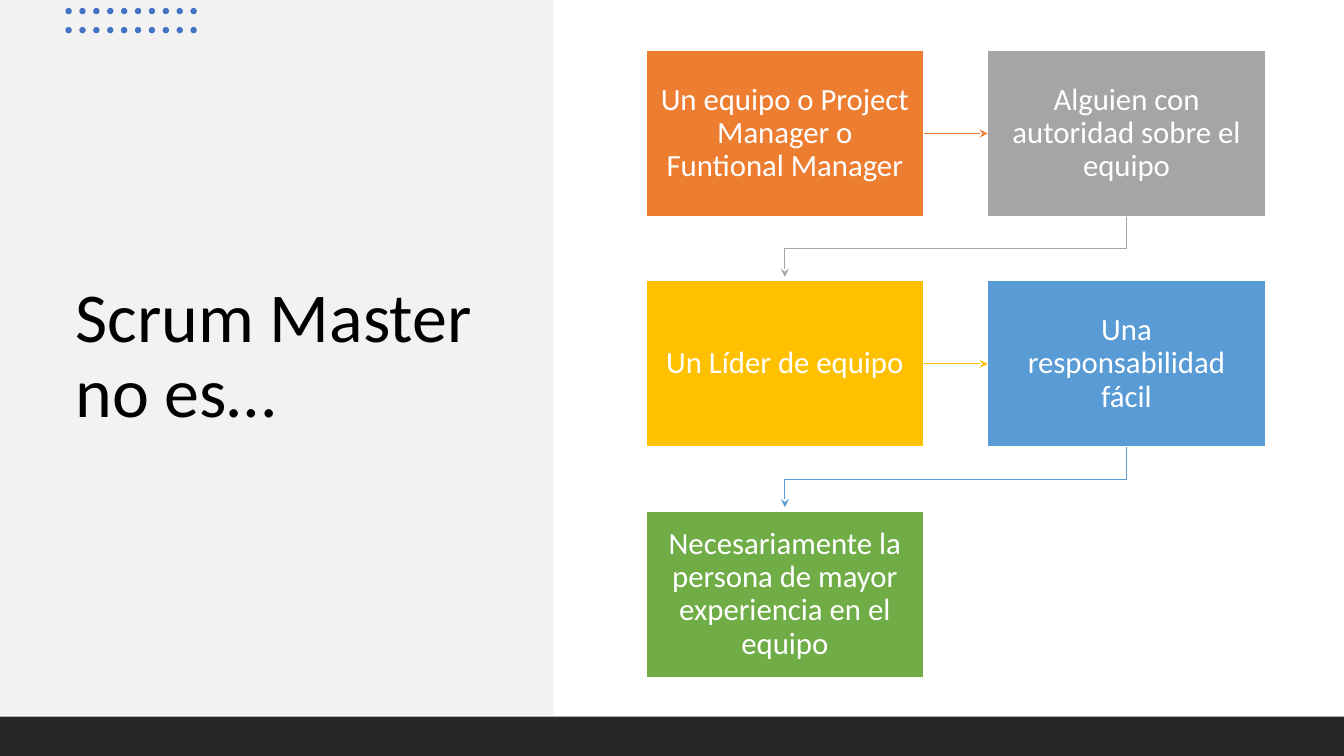
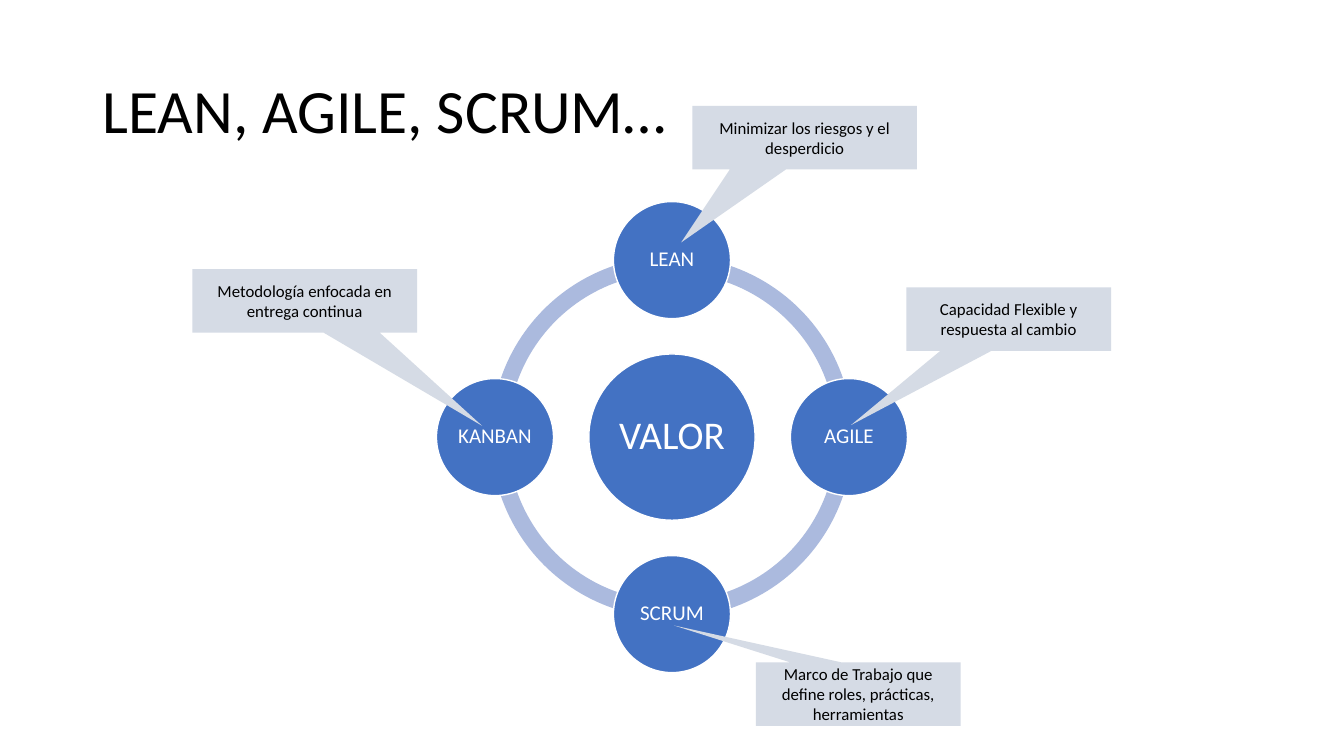
from itertools import pairwise, product

from lxml import etree
from pptx import Presentation
from pptx import util as u
from pptx.dml import color
from pptx.enum import shapes, text
from pptx.oxml import ns

FONT = "Calibri"
BLACK, WHITE = "000000", "FFFFFF"
PANEL, BAND, DOT = "F2F2F2", "262626", "4472C4"
NODE, RING, NOTE = "4372C3", "ABBADE", "D5DBE5"
KINDS = shapes.MSO_SHAPE
WIDTH, HEIGHT = 33.87, 19.05

STEPS = [
    ("Un equipo o Project Manager o Funtional Manager", "ED7D31"),
    ("Alguien con autoridad sobre el equipo", "A5A5A5"),
    ("Un Líder de equipo", "FFC000"),
    ("Una responsabilidad fácil", "599BD5"),
    ("Necesariamente la persona de mayor experiencia en el equipo", "70AD47"),
]
SATELLITES = [("LEAN", 0, -1), ("AGILE", 1, 0), ("SCRUM", 0, 1), ("KANBAN", -1, 0)]
NOTES = [
    ("Minimizar los riesgos y el desperdicio", (17.45, 2.67, 5.66, 1.6), (-0.55, 1.65)),
    ("Capacidad Flexible y respuesta al cambio", (22.84, 7.24, 5.16, 1.6), (-0.77, 1.67)),
    ("Marco de Trabajo que define roles, prácticas, herramientas",
     (19.05, 16.69, 5.16, 1.6), (-0.9, -1.08)),
    ("Metodología enfocada en entrega continua", (4.85, 6.78, 5.66, 1.6), (0.79, 1.97)),
]


def rgb(value):
    """Turn a hex string into a colour."""
    return color.RGBColor.from_string(value)


def cm(values):
    """Turn numbers into lengths."""
    return [u.Cm(value) for value in values]


def assign(target, formats):
    """Set each attribute named in a dict of format values."""
    for name, value in formats.items():
        setattr(target, name, value)


def write(shape, words, size, ink, align="CENTER", spacing=0.9, inset=(0.25, 0.13)):
    """Fill a shape with one formatted paragraph."""
    frame = shape.text_frame
    across, down = cm(inset)
    assign(frame, {
        "text": words, "word_wrap": True, "auto_size": text.MSO_AUTO_SIZE.NONE,
        "vertical_anchor": text.MSO_ANCHOR.MIDDLE,
        "margin_left": across, "margin_right": across,
        "margin_top": down, "margin_bottom": down,
    })
    para = frame.paragraphs[0]
    assign(para, {"alignment": text.PP_ALIGN[align], "line_spacing": spacing})
    assign(para.font, {"name": FONT, "size": u.Pt(size)})
    para.font.color.rgb = rgb(ink)


def add_shape(parent, kind, box, fill, outline=None, adjust=()):
    """Add a flat preset shape with an optional thin outline."""
    shape = parent.add_shape(kind, *cm(box))
    shape.shadow.inherit = False
    shape.fill.solid()
    shape.fill.fore_color.rgb = rgb(fill)
    if outline:
        shape.line.color.rgb = rgb(outline)
        shape.line.width = u.Pt(1)
    else:
        shape.line.fill.background()
    for index, value in enumerate(adjust):
        shape.adjustments[index] = value
    return shape


def style_arrow(arrow, ink):
    """Give a line its colour, width and stealth arrowhead."""
    arrow.line.color.rgb = rgb(ink)
    arrow.line.width = u.Pt(0.75)
    props = arrow.element.spPr
    etree.SubElement(props.find(ns.qn("a:ln")), ns.qn("a:tailEnd"), type="stealth")
    etree.SubElement(props, ns.qn("a:effectLst"))


def add_page(deck, title, box, size):
    """Add a title-only slide with its title placed and formatted."""
    page = deck.slides.add_slide(deck.slide_layouts[5])
    holder = page.shapes.title
    assign(holder, dict(zip(("left", "top", "width", "height"), cm(box))))
    write(holder, title, size, BLACK, align="LEFT")
    return page


def add_side_panel(page, box):
    """Place the grey panel behind the title, with its dots, and the dark band."""
    left, top, width, height = box
    panel = add_shape(page.shapes, KINDS.RECTANGLE, box, PANEL)
    panel.element.addnext(page.shapes.title.element)
    dots = page.shapes.add_group_shape().shapes
    for row, column in product(range(2), range(10)):
        spot = (left + 1.65 + 0.35 * column, top + 0.2 + 0.48 * row, 0.16, 0.16)
        add_shape(dots, KINDS.OVAL, spot, DOT)
    base = top + height + 0.03
    add_shape(page.shapes, KINDS.RECTANGLE, (0, base, WIDTH, HEIGHT - base), BAND)


def add_straight_arrow(page, start, end, ink):
    """Join the right side of one box to the left side of the next."""
    arrow = page.shapes.add_connector(shapes.MSO_CONNECTOR.STRAIGHT, 0, 0, 0, 0)
    arrow.begin_connect(start, 3)
    arrow.end_connect(end, 1)
    style_arrow(arrow, ink)


def add_bent_arrow(page, start, end, ink):
    """Lead from the bottom of one box to the top of a box in the next row."""
    from_x, to_x = (box.left + box.width // 2 for box in (start, end))
    from_y = start.top + start.height
    middle = (from_y + end.top) // 2
    outline = page.shapes.build_freeform(from_x, from_y)
    stops = [(from_x, middle), (to_x, middle), (to_x, end.top - u.Cm(0.1))]
    outline.add_line_segments(stops, close=False)
    arrow = outline.convert_to_shape()
    arrow.fill.background()
    style_arrow(arrow, ink)


def add_flow(page, box, columns=2, rows=3):
    """Lay the steps out in a grid and link them in reading order."""
    left, top, width, height = box
    step_width, step_height = 7, 4.19
    across = (width - step_width) / (columns - 1)
    down = (height - step_height) / (rows - 1)
    placed = []
    for index, (words, fill) in enumerate(STEPS):
        row, column = divmod(index, columns)
        spot = (left + across * column, top + down * row, step_width, step_height)
        step = add_shape(page.shapes, KINDS.RECTANGLE, spot, fill, WHITE)
        write(step, words, 22, WHITE, inset=(0.33, 0.36))
        placed.append((step, fill))
    for (start, ink), (end, _) in pairwise(placed):
        link = add_straight_arrow if start.top == end.top else add_bent_arrow
        link(page, start, end, ink)


def add_wheel(page, box):
    """Draw the ring, its hub and the four circles around it."""
    left, top, side = box
    middle_x, middle_y = left + side / 2, top + side / 2
    ring, hub, satellite = 9.12, 4.19, 2.95
    reach = (side - satellite) / 2

    def centred(size, x=0, y=0):
        """Return a square box of a size, offset from the middle."""
        return (middle_x + x - size / 2, middle_y + y - size / 2, size, size)

    for start, end in ((108, 162), (54, 108), (0, 54), (162, 0)):
        add_shape(page.shapes, KINDS.BLOCK_ARC, centred(ring), RING,
                  adjust=(start, end, 0.046))
    circles = [("VALOR", centred(hub), 28)]
    circles += [(words, centred(satellite, x * reach, y * reach), 15)
                for words, x, y in SATELLITES]
    for words, spot, size in circles:
        circle = add_shape(page.shapes, KINDS.OVAL, spot, NODE, WHITE)
        write(circle, words, size, WHITE, inset=(0.05, 0.05))


def add_notes(page):
    """Place the callouts that explain the circles."""
    for words, box, tip in NOTES:
        note = add_shape(page.shapes, KINDS.RECTANGULAR_CALLOUT, box, NOTE, adjust=tip)
        write(note, words, 12, BLACK, spacing=1.0)


def main():
    """Build both slides and save the deck."""
    deck = Presentation()
    deck.slide_width, deck.slide_height = cm((WIDTH, HEIGHT))

    page = add_page(deck, "Scrum Master no es…", (1.65, 3.35, 10.77, 11.3), 50)
    add_side_panel(page, (0, 0, 13.94, 18.03))
    add_flow(page, (16.28, 1.27, 15.61, 15.8))

    page = add_page(deck, "LEAN, AGILE, SCRUM…", (2.33, 1.01, 29.21, 3.68), 44)
    add_wheel(page, (11, 5.08, 11.87))
    add_notes(page)

    deck.save("out.pptx")


if __name__ == "__main__":
    main()
